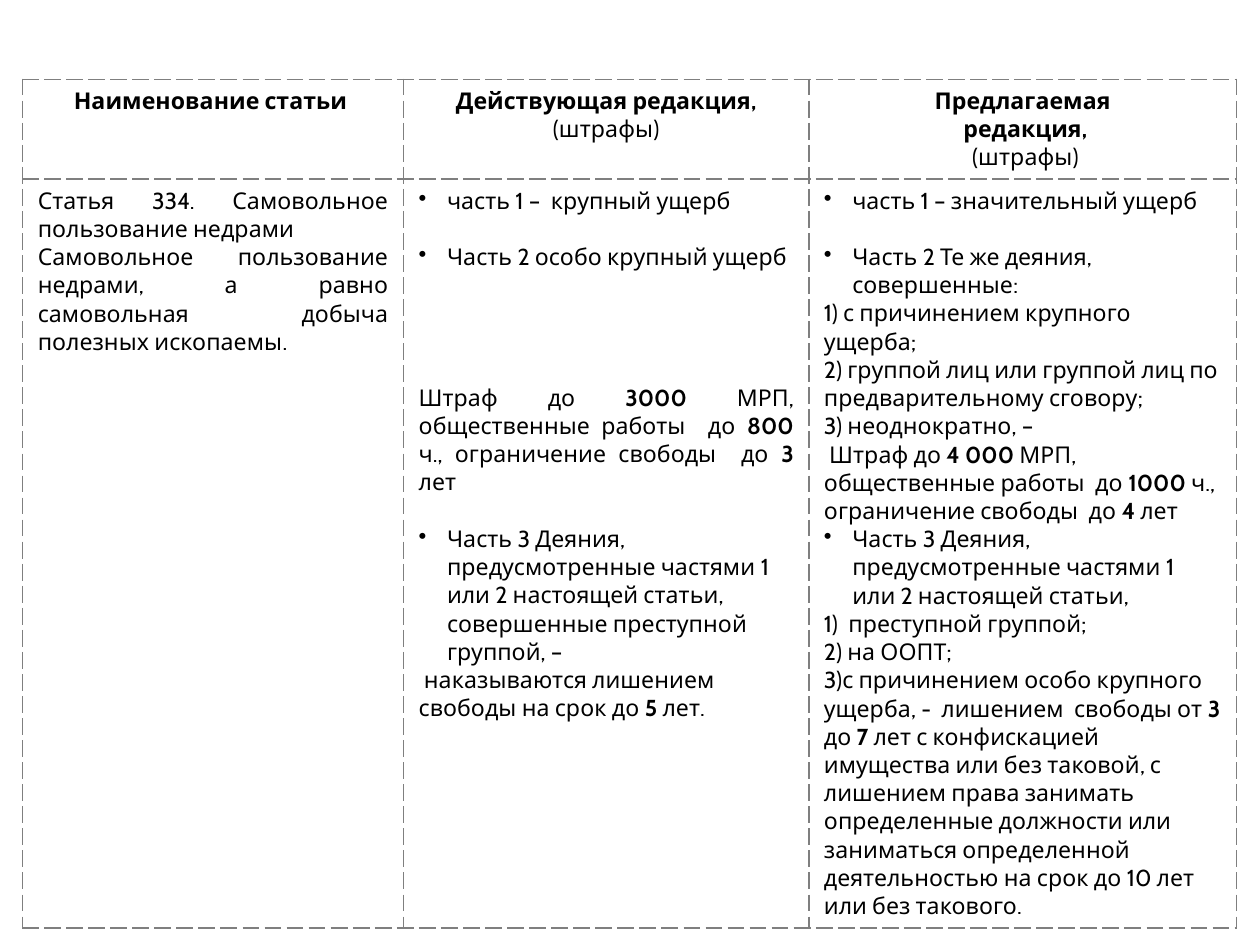
"""Build a slide comparing the current and proposed wording of article 334."""
from lxml.etree import SubElement
from pptx import Presentation
from pptx.dml.color import RGBColor
from pptx.enum.text import PP_ALIGN as Align
from pptx.oxml import parse_xml
from pptx.oxml.ns import nsdecls, qn
from pptx.util import Pt

BLACK = RGBColor(0x00, 0x00, 0x00)
WHITE = RGBColor(0xFF, 0xFF, 0xFF)
BORDER = RGBColor(0x7F, 0x7F, 0x7F)
FONT, FONT_SIZE, LINE_HEIGHT = "Cabin", 11, 13.4
BULLET_INDENT = 13.5
BORDER_WIDTH = 0.75

SLIDE_SIZE = (600, 450)
TABLE_LEFT, TABLE_TOP = 10.8, 37.8
COLUMN_WIDTHS = (181.4, 193, 203.8)
ROW_HEIGHTS = (47.5, 356)

CENTER, JUSTIFY, LEFT = Align.CENTER, Align.JUSTIFY, Align.LEFT

# Each paragraph: text with **bold** parts, alignment, bulleted, lines of space before
HEADINGS = [
    [("**Наименование статьи **", CENTER, False, 0)],
    [("**Действующая редакция,**", CENTER, False, 0),
     ("(штрафы)", CENTER, False, 0)],
    [("**Предлагаемая**", CENTER, False, 0),
     ("** редакция,**", CENTER, False, 0),
     (" (штрафы)", CENTER, False, 0)],
]
ARTICLE = [
    ("Статья 334. Самовольное пользование недрами", JUSTIFY, False, 0),
    ("Самовольное пользование недрами, а равно самовольная добыча полезных ископаемы.",
     JUSTIFY, False, 0),
]
CURRENT = [
    ("часть 1 –  крупный ущерб", JUSTIFY, True, 0),
    ("Часть 2 особо крупный ущерб", JUSTIFY, True, 1),
    ("Штраф до **3000** МРП, общественные работы  до **800** ч., "
     "ограничение свободы  до **3** лет", JUSTIFY, False, 4),
    ("Часть 3 Деяния, предусмотренные частями 1 или 2 настоящей статьи, "
     "совершенные преступной группой, –", LEFT, True, 1),
    (" наказываются лишением свободы на срок до **5 **лет.", LEFT, False, 0),
]
PROPOSED = [
    ("часть 1 – значительный ущерб", JUSTIFY, True, 0),
    ("Часть 2 Те же деяния, совершенные:", LEFT, True, 1),
    ("1) с причинением крупного ущерба;", LEFT, False, 0),
    ("2) группой лиц или группой лиц по предварительному сговору;", LEFT, False, 0),
    ("3) неоднократно, –", LEFT, False, 0),
    (" Штраф до **4 000 **МРП, общественные работы  до **1000** ч., "
     "ограничение свободы  до **4** лет", LEFT, False, 0),
    ("Часть 3 Деяния, предусмотренные частями 1 или 2 настоящей статьи,", LEFT, True, 0),
    ("1)  преступной группой;", LEFT, False, 0),
    ("2) на ООПТ;", LEFT, False, 0),
    ("3)с причинением особо крупного ущерба, -  лишением  свободы от **3** до **7** лет "
     "с конфискацией имущества или без таковой, с лишением права занимать определенные "
     "должности или заниматься определенной деятельностью на срок до 10 лет "
     "или без такового.", LEFT, False, 0),
]
ROWS = [HEADINGS, [ARTICLE, CURRENT, PROPOSED]]


def write_paragraph(paragraph, text, alignment, bulleted, lines_before):
    """Fill one paragraph, alternating regular and bold parts."""
    if bulleted:
        properties = paragraph._p.get_or_add_pPr()
        properties.set("marL", str(Pt(BULLET_INDENT)))
        properties.set("indent", str(-Pt(BULLET_INDENT)))
        SubElement(properties, qn("a:buChar")).set("char", "•")
    paragraph.alignment = alignment
    if lines_before:
        paragraph.space_before = Pt(lines_before * LINE_HEIGHT)
    paragraph.font.name = FONT
    paragraph.font.size = Pt(FONT_SIZE)
    paragraph.font.color.rgb = BLACK
    for position, part in enumerate(text.split("**")):
        if part:
            run = paragraph.add_run()
            run.text = part
            run.font.bold = position % 2 == 1


def dash_borders(cell):
    """Draw a dashed line on all four sides of a cell."""
    properties = cell._tc.get_or_add_tcPr()
    for order, side in enumerate(("lnL", "lnR", "lnT", "lnB")):
        properties.insert(order, parse_xml(
            f'<a:{side} {nsdecls("a")} w="{Pt(BORDER_WIDTH)}"><a:solidFill>'
            f'<a:srgbClr val="{BORDER}"/></a:solidFill><a:prstDash val="dash"/></a:{side}>'))


def main():
    """Create the slide and save it."""
    deck = Presentation()
    deck.slide_width, deck.slide_height = map(Pt, SLIDE_SIZE)
    slide = deck.slides.add_slide(deck.slide_layouts[6])
    comparison = slide.shapes.add_table(
        len(ROWS), len(COLUMN_WIDTHS), Pt(TABLE_LEFT), Pt(TABLE_TOP),
        Pt(sum(COLUMN_WIDTHS)), Pt(sum(ROW_HEIGHTS))).table
    comparison.first_row = comparison.horz_banding = False
    for column, width in zip(comparison.columns, COLUMN_WIDTHS):
        column.width = Pt(width)
    for row, height, contents in zip(comparison.rows, ROW_HEIGHTS, ROWS):
        row.height = Pt(height)
        for cell, paragraphs in zip(row.cells, contents):
            cell.fill.solid()
            cell.fill.fore_color.rgb = WHITE
            dash_borders(cell)
            frame = cell.text_frame
            for index, content in enumerate(paragraphs):
                paragraph = frame.add_paragraph() if index else frame.paragraphs[0]
                write_paragraph(paragraph, *content)
    deck.save("out.pptx")


if __name__ == "__main__":
    main()
